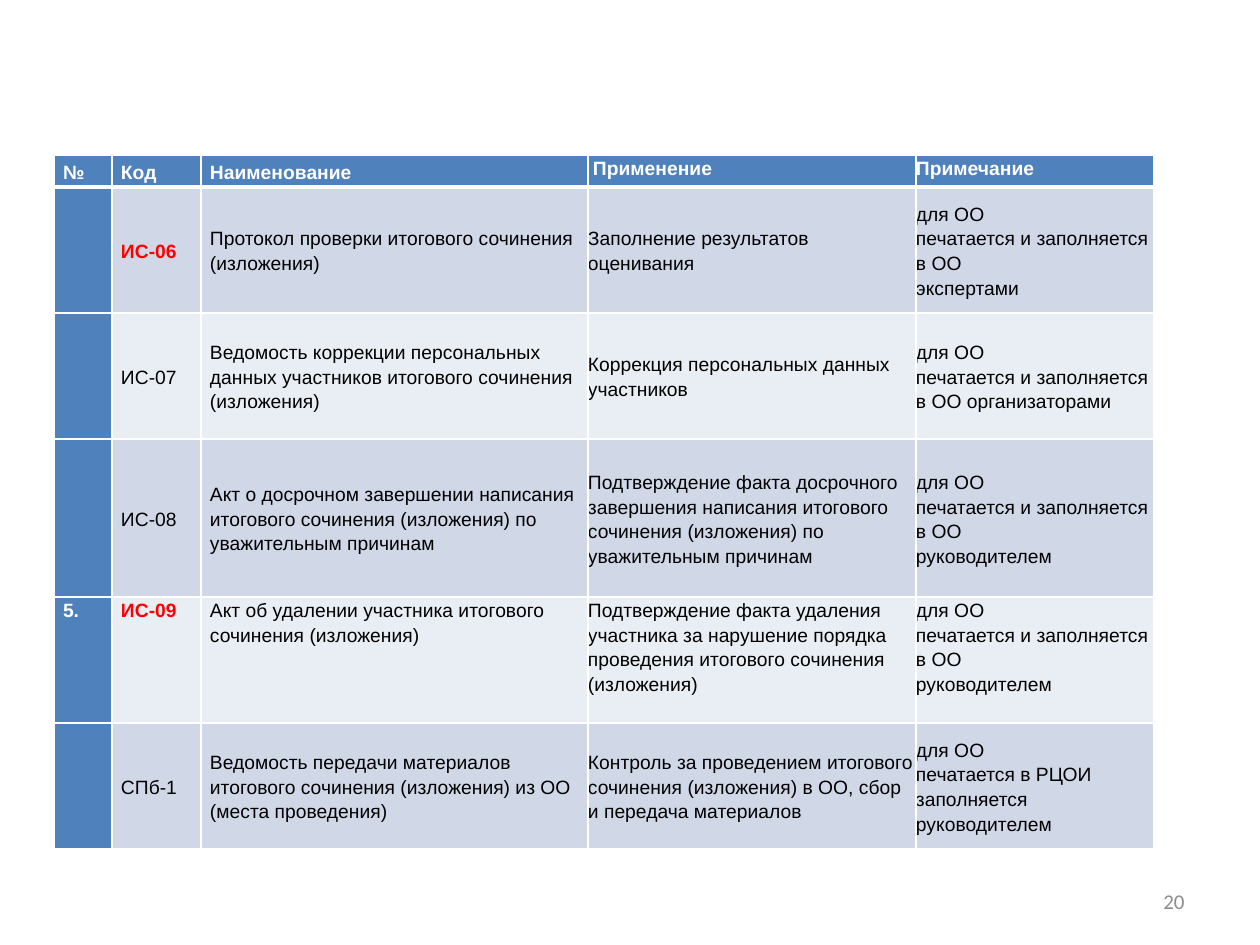
import pptx
import pptx.util
import pptx.dml.color
import pptx.enum.text
import lxml.etree

PX = 914400 / 126
RGB = pptx.dml.color.RGBColor
WHITE = RGB(0xFF, 0xFF, 0xFF)
BLACK = RGB(0, 0, 0)
RED = RGB(0xFF, 0, 0)
GRAY = RGB(0x8C, 0x8C, 0x8C)
BLUE = RGB(0x4F, 0x81, 0xBD)
BANDS = [RGB(0xD0, 0xD8, 0xE8), RGB(0xE9, 0xED, 0xF4)]

ALIGN = pptx.enum.text.PP_ALIGN
ANCHOR = pptx.enum.text.MSO_ANCHOR
NS = "http://schemas.openxmlformats.org/drawingml/2006/main"

COLS = [58, 89, 387, 328, 238]
HEIGHTS = [32, 126, 126, 158, 126, 126]
HEADER = ["№", "Код", "Наименование", "Применение", "Примечание"]
ROWS = [
    ["", "ИС-06", "Протокол проверки итогового сочинения (изложения)",
     "Заполнение результатов оценивания",
     "для ОО\nпечатается и заполняется в ОО\nэкспертами"],
    ["", "ИС-07",
     "Ведомость коррекции персональных данных участников итогового сочинения (изложения)",
     "Коррекция персональных данных участников",
     "для ОО\nпечатается и заполняется в ОО организаторами"],
    ["", "ИС-08",
     "Акт о досрочном завершении написания итогового сочинения (изложения) "
     "по уважительным причинам",
     "Подтверждение факта досрочного завершения написания итогового сочинения "
     "(изложения) по уважительным причинам",
     "для ОО\nпечатается и заполняется в ОО\nруководителем"],
    ["5.", "ИС-09", "Акт об удалении участника итогового сочинения (изложения)",
     "Подтверждение факта удаления участника за нарушение порядка проведения "
     "итогового сочинения (изложения)",
     "для ОО\nпечатается и заполняется в ОО\nруководителем"],
    ["", "СПб-1",
     "Ведомость передачи материалов итогового сочинения (изложения) из ОО "
     "(места проведения)",
     "Контроль за проведением итогового сочинения (изложения) в ОО, "
     "сбор и передача материалов",
     "для ОО\nпечатается в РЦОИ\nзаполняется руководителем"],
]
RED_CODES = ("ИС-06", "ИС-09")
TOP_ROW = 4


def px(n):
    return pptx.util.Emu(round(n * PX))


def set_attrs(obj, values):
    for name, value in values.items():
        setattr(obj, name, value)


def write(tf, text, color, font, para):
    """Write one paragraph per line of text."""
    for i, line in enumerate(text.split("\n")):
        p = tf.paragraphs[0] if i == 0 else tf.add_paragraph()
        set_attrs(p, para)
        if line:
            r = p.add_run()
            r.text = line
            set_attrs(r.font, font)
            r.font.color.rgb = color


def add_borders(cell, bottom):
    tc_pr = cell._tc.get_or_add_tcPr()
    for side, width in {"L": 1, "R": 1, "T": 1, "B": bottom}.items():
        ln = lxml.etree.SubElement(tc_pr, f"{{{NS}}}ln{side}",
                                   w=str(pptx.util.Pt(width)))
        fill = lxml.etree.SubElement(ln, f"{{{NS}}}solidFill")
        lxml.etree.SubElement(fill, f"{{{NS}}}srgbClr", val=str(WHITE))


def format_cell(cell, row, col, text):
    head = row == 0
    strong = head or col == 0
    red = text in RED_CODES
    at_top = row == TOP_ROW or (head and col >= 3)
    left = 9 if col < 3 else 5 if head and col == 3 else 0
    set_attrs(cell, {
        "margin_left": px(left), "margin_right": px(9 if col < 3 else 0),
        "margin_top": 0, "margin_bottom": 0,
        "vertical_anchor": ANCHOR.TOP if at_top else ANCHOR.MIDDLE,
    })
    add_borders(cell, 3 if head else 1)
    cell.fill.solid()
    cell.fill.fore_color.rgb = BLUE if strong else BANDS[(row - 1) % 2]
    para = {"line_spacing": 1.15}
    if col == 0:
        para["alignment"] = ALIGN.JUSTIFY
    if col == 1 and not head and not at_top:
        para["space_after"] = pptx.util.Pt(10)
    font = {"name": "Arial", "size": pptx.util.Pt(11), "bold": strong or red}
    write(cell.text_frame, text, WHITE if strong else RED if red else BLACK,
          font, para)


def add_forms_table(s, x, y):
    rows = [HEADER] + ROWS
    table = s.shapes.add_table(len(rows), len(COLS), px(x), px(y),
                               px(sum(COLS)), px(sum(HEIGHTS))).table
    for column, width in zip(table.columns, COLS):
        column.width = px(width)
    for i, (row, height) in enumerate(zip(rows, HEIGHTS)):
        table.rows[i].height = px(height)
        for j, text in enumerate(row):
            format_cell(table.cell(i, j), i, j, text)


def add_page_number(s, x, y, w, h):
    tf = s.shapes.add_textbox(px(x), px(y), px(w), px(h)).text_frame
    set_attrs(tf, {"word_wrap": True, "vertical_anchor": ANCHOR.MIDDLE})
    write(tf, "20", GRAY, {"name": "Calibri", "size": pptx.util.Pt(12)},
          {"alignment": ALIGN.RIGHT})


def main():
    prs = pptx.Presentation()
    set_attrs(prs, {"slide_width": px(1260), "slide_height": px(945)})
    s = prs.slides.add_slide(prs.slide_layouts[6])
    add_forms_table(s, 54, 155)
    add_page_number(s, 903, 876, 294, 50)
    prs.save("out.pptx")


if __name__ == "__main__":
    main()
